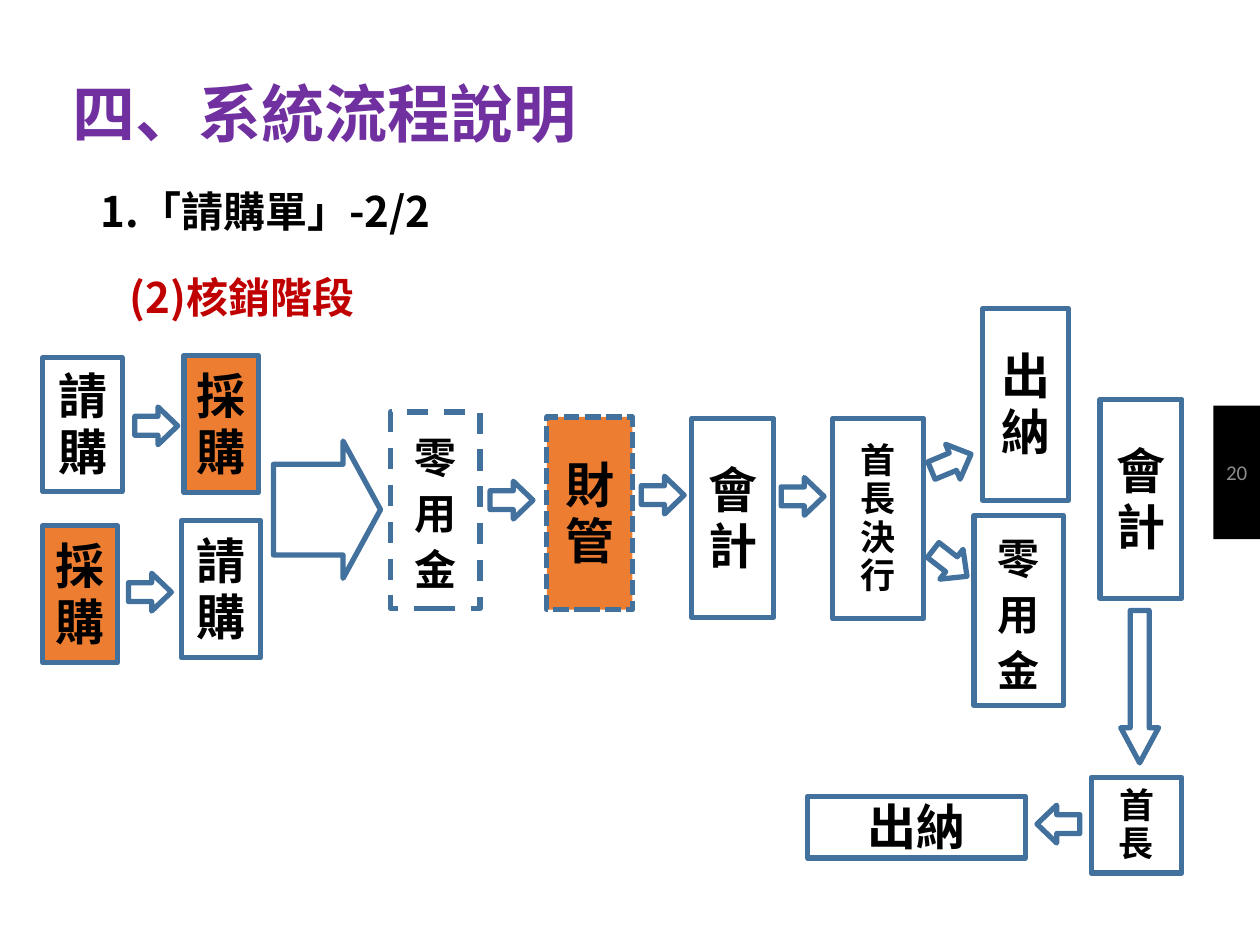
from lxml import etree
from pptx import Presentation
from pptx.dml.color import RGBColor
from pptx.enum.dml import MSO_LINE
from pptx.enum.shapes import MSO_SHAPE
from pptx.enum.text import MSO_ANCHOR, PP_ALIGN
from pptx.oxml.ns import qn
from pptx.util import Inches, Pt

RECTANGLE = MSO_SHAPE.RECTANGLE
RIGHT_ARROW = MSO_SHAPE.RIGHT_ARROW
DASH = MSO_LINE.DASH
SHORT_DASH = MSO_LINE.SQUARE_DOT
MIDDLE = MSO_ANCHOR.MIDDLE
CENTER = PP_ALIGN.CENTER
LEFT = PP_ALIGN.LEFT

LATIN_FONT = "Calibri"
CJK_FONT = "Noto Sans CJK SC"
WHITE = "FFFFFF"
BLACK = "000000"
BLUE = "41719C"
ORANGE = "ED7D31"
PURPLE = "7030A0"
RED = "C00000"
GRAY = "8C8C8C"


def color(value):
    return RGBColor.from_string(value)


def write_paragraph(paragraph, text, size=28, fill=BLACK, bold=True, font=LATIN_FONT,
                    align=CENTER, line_spacing=None, space_before=0, indent=0):
    paragraph.alignment = align
    paragraph.line_spacing = line_spacing
    paragraph.space_before = Pt(space_before)
    if indent:
        paragraph._p.get_or_add_pPr().set("marL", str(Inches(indent)))
    run = paragraph.add_run()
    run.text = text
    run.font.size = Pt(size)
    run.font.bold = bold
    run.font.color.rgb = color(fill)
    run.font.name = font
    east_asian = etree.SubElement(run._r.get_or_add_rPr(), qn("a:ea"))
    east_asian.set("typeface", CJK_FONT)


def next_paragraph(frame, index):
    return frame.add_paragraph() if index else frame.paragraphs[0]


def add_outlined(slide, kind, left, top, width, height, fill=WHITE, dash=None):
    shape = slide.shapes.add_shape(kind, Inches(left), Inches(top), Inches(width), Inches(height))
    shape.shadow.inherit = False
    shape.fill.solid()
    shape.fill.fore_color.rgb = color(fill)
    shape.line.color.rgb = color(BLUE)
    shape.line.width = Pt(3)
    if dash:
        shape.line.dash_style = dash
    return shape


def add_step(slide, lines, left, top, width, height, size=28, spacing=32, fill=WHITE, dash=None):
    shape = add_outlined(slide, RECTANGLE, left, top, width, height, fill, dash)
    frame = shape.text_frame
    frame.word_wrap = True
    frame.vertical_anchor = MIDDLE
    for index, line in enumerate(lines):
        write_paragraph(next_paragraph(frame, index), line, size=size, line_spacing=Pt(spacing))


def add_arrow(slide, left, top, width=0.34, height=0.3, shaft=0.5, head=0.52, rotation=0):
    shape = add_outlined(slide, RIGHT_ARROW, left, top, width, height)
    shape.adjustments[0] = shaft
    shape.adjustments[1] = head
    shape.rotation = rotation


def add_text_box(slide, left, top, width, height):
    box = slide.shapes.add_textbox(Inches(left), Inches(top), Inches(width), Inches(height))
    frame = box.text_frame
    frame.word_wrap = True
    frame.margin_left = frame.margin_right = Inches(0.1)
    frame.margin_top = frame.margin_bottom = Inches(0.1)
    return frame


def add_page_number(slide, left, top, width, height):
    bar = slide.shapes.add_shape(RECTANGLE, Inches(left), Inches(top), Inches(width), Inches(height))
    bar.shadow.inherit = False
    bar.fill.solid()
    bar.fill.fore_color.rgb = color(BLACK)
    bar.line.fill.background()
    frame = add_text_box(slide, left, top + 0.13, width, height - 0.26)
    frame.vertical_anchor = MIDDLE
    write_paragraph(frame.paragraphs[0], "20", size=12, fill=GRAY, bold=False)


def add_headings(slide, left, top, width, height):
    frame = add_text_box(slide, left, top, width, height)
    headings = [
        ("四、系統流程說明", 36, PURPLE, 0),
        ("1.「請購單」-2/2", 24, BLACK, 0.22),
        ("(2)核銷階段", 24, RED, 0.45),
    ]
    for index, (text, size, fill, indent) in enumerate(headings):
        write_paragraph(next_paragraph(frame, index), text, size=size, fill=fill, font=CJK_FONT,
                        align=LEFT, line_spacing=1.5, space_before=6, indent=indent)


def add_request_lanes(slide, left, top):
    add_step(slide, "請購", left, top + 0.02, 0.63, 1.06)
    add_arrow(slide, left + 0.73, top + 0.41)
    add_step(slide, "採購", left + 1.12, top, 0.59, 1.09, fill=ORANGE)
    add_step(slide, "採購", left, top + 1.35, 0.59, 1.09, fill=ORANGE)
    add_arrow(slide, left + 0.68, top + 1.73)
    add_step(slide, "請購", left + 1.1, top + 1.31, 0.63, 1.09)


def add_approval_chain(slide, left, top):
    add_arrow(slide, left, top + 0.23, 0.85, 1.09, shaft=0.66, head=0.35)
    add_step(slide, "零用金", left + 0.93, top, 0.71, 1.56, size=24, dash=DASH)
    add_arrow(slide, left + 1.72, top + 0.55)
    add_step(slide, "財管", left + 2.17, top + 0.04, 0.68, 1.53, fill=ORANGE, dash=SHORT_DASH)
    add_arrow(slide, left + 2.92, top + 0.51)
    add_step(slide, "會計", left + 3.32, top + 0.05, 0.65, 1.58)
    add_arrow(slide, left + 4.03, top + 0.52)
    add_step(slide, ["首長", "決行"], left + 4.44, top + 0.05, 0.72, 1.59, size=20, spacing=22)


def add_payment_branches(slide, left, top):
    add_arrow(slide, left, top + 1.07, rotation=337.4)
    add_step(slide, ["出納"], left + 0.42, top, 0.68, 1.52)
    add_arrow(slide, left - 0.01, top + 1.87, rotation=37.9)
    add_step(slide, "零用金", left + 0.35, top + 1.64, 0.71, 1.51, size=24)


def add_closing_steps(slide, left, top):
    add_step(slide, "會計", left + 2.32, top, 0.65, 1.58)
    add_arrow(slide, left + 2.03, top + 2.13, 1.21, head=0.93, rotation=90)
    add_step(slide, ["首長"], left + 2.25, top + 3, 0.72, 0.76, size=20, spacing=22)
    add_arrow(slide, left + 1.82, top + 3.22, rotation=180)
    add_step(slide, ["出納"], left, top + 3.15, 1.73, 0.49)


def main():
    presentation = Presentation()
    presentation.slide_width = Inches(10)
    presentation.slide_height = Inches(7.5)
    slide = presentation.slides.add_slide(presentation.slide_layouts[6])
    add_page_number(slide, 9.63, 3.22, 0.37, 1.06)
    add_headings(slide, 0.48, 0.19, 9.15, 4.26)
    add_request_lanes(slide, 0.34, 2.82)
    add_approval_chain(slide, 2.17, 3.27)
    add_payment_branches(slide, 7.38, 2.45)
    add_closing_steps(slide, 6.41, 3.17)
    presentation.save("out.pptx")


if __name__ == "__main__":
    main()
